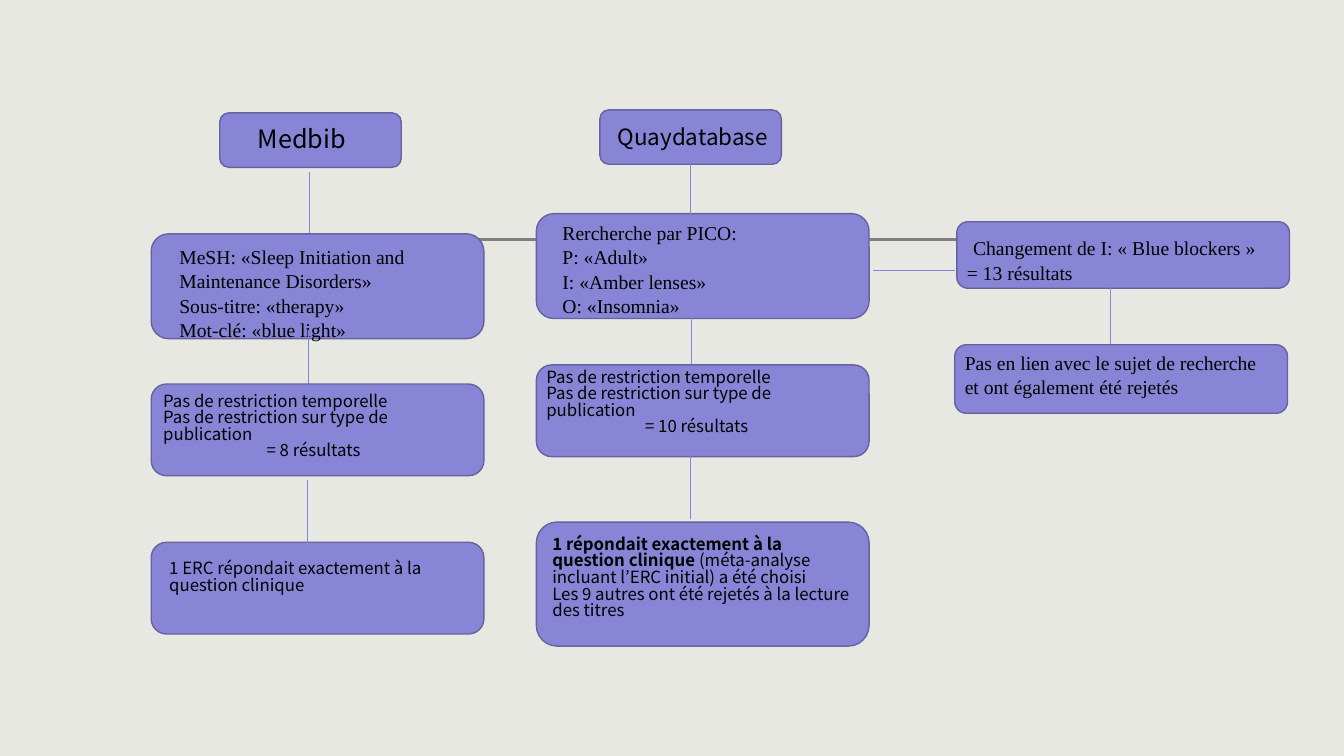
from lxml.etree import SubElement
from pptx import Presentation
from pptx.dml.color import RGBColor
from pptx.enum.shapes import MSO_CONNECTOR, MSO_SHAPE
from pptx.enum.text import PP_ALIGN
from pptx.oxml.ns import qn
from pptx.util import Inches, Pt

COLORS = {"background": "E8E8E2", "box": "8885D7", "border": "65629F",
          "rule": "808080", "text": "000000"}
SANS, SERIF = "Noto Sans CJK JP", "Times New Roman"
LINE_SPACING = {SANS: 0.82, SERIF: 1.04}
BOX_W, TEXT_W, DROP = 3.3, 3.18, 0.63


def color(name):
    return RGBColor.from_string(COLORS[name])


def add_line(slide, x1, y1, x2, y2, name="box", width=0.75):
    line = slide.shapes.add_connector(
        MSO_CONNECTOR.STRAIGHT, Inches(x1), Inches(y1), Inches(x2), Inches(y2))
    line.line.color.rgb = color(name)
    line.line.width = Pt(width)
    SubElement(line._element.spPr, qn("a:effectLst"))
    return line


def add_drop(slide, x, y):
    """Vertical link of the standard length, starting at (x, y)."""
    return add_line(slide, x, y, x, y + DROP)


def add_text(slide, x, y, w, h, paragraphs, size=12, font=SANS, last_centered=False):
    """Each paragraph is a string or a list of (text, run format) pairs."""
    tf = slide.shapes.add_textbox(Inches(x), Inches(y), Inches(w), Inches(h)).text_frame
    tf.word_wrap = True
    for i, runs in enumerate(paragraphs):
        p = tf.paragraphs[0] if i == 0 else tf.add_paragraph()
        p.line_spacing = LINE_SPACING[font]
        for text, style in [(runs, {})] if isinstance(runs, str) else runs:
            r = p.add_run()
            r.text = text
            r.font.name = font
            r.font.size = Pt(style.get("size", size))
            r.font.bold = style.get("bold", False)
            r.font.color.rgb = color("text")
    if last_centered:
        p.alignment = PP_ALIGN.CENTER


def add_node(slide, x, y, w, h, paragraphs, dx=0, dy=0, text_w=TEXT_W, text_h=None, **style):
    """Rounded box with a label set off from its corner by (dx, dy)."""
    sp = slide.shapes.add_shape(
        MSO_SHAPE.ROUNDED_RECTANGLE, Inches(x), Inches(y), Inches(w), Inches(h))
    sp.shadow.inherit = False
    sp.fill.solid()
    sp.fill.fore_color.rgb = color("box")
    sp.line.color.rgb = color("border")
    sp.line.width = Pt(1)
    add_text(slide, x + dx, y + dy, text_w, text_h or h, paragraphs, **style)
    return sp


def add_restrictions(slide, x, y, result, **offset):
    add_node(slide, x, y, BOX_W, 0.91,
             ["Pas de restriction temporelle",
              "Pas de restriction sur type de publication", result],
             text_h=1.11, last_centered=True, **offset)


def add_mesh_column(slide, x, y):
    add_node(slide, x + 0.68, y, 1.8, 0.54, ["Medbib"], dx=0.28, dy=0.11,
             text_w=1.51, text_h=0.4, size=18)
    add_drop(slide, x + 1.57, y + 0.59)
    add_node(slide, x, y + 1.2, BOX_W, 1.04,
             ["MeSH: «Sleep Initiation and Maintenance Disorders»",
              "Sous-titre: «therapy»", "Mot-clé: «blue light»"],
             dx=0.18, dy=0.05, size=14, font=SERIF)
    add_drop(slide, x + 1.56, y + 2.15)
    add_restrictions(slide, x, y + 2.69, "= 8 résultats", dx=0.02, dy=0.05)
    add_node(slide, x, y + 4.26, BOX_W, 0.91,
             ["1 ERC répondait exactement à la question clinique"],
             dx=0.08, dy=0.14, text_h=0.5)
    add_drop(slide, x + 1.55, y + 3.64)


def add_pico_column(slide, x, y):
    title = add_node(slide, x + 0.63, y, 1.8, 0.54, ["Quaydatabase"], dx=0.08, dy=0.13,
                     text_w=1.74, text_h=0.37, size=16)
    add_node(slide, x, y + 1.03, BOX_W, 1.04,
             ["Rercherche par PICO:", "P: «Adult»", "I: «Amber lenses»", "O: «Insomnia»"],
             dx=0.16, dy=0.01, size=14, font=SERIF)
    add_drop(slide, x + 1.54, y + 1.95)
    add_restrictions(slide, x, y + 2.53, "= 10 résultats")
    add_node(slide, x, y + 4.09, BOX_W, 1.23,
             [[("1 répondait exactement à la question clinique", {"bold": True}),
               (" (méta-analyse incluant l’ERC initial) a été choisi", {})],
              "Les 9 autres ont été rejetés à la lecture des titres"],
             dx=0.06, dy=0.1, text_h=1.11)
    add_drop(slide, x + 1.53, y + 3.43)
    add_drop(slide, x + 1.53, y + 0.51).begin_connect(title, 2)


def add_change_column(slide, x, y):
    add_line(slide, x - 0.83, y + 0.48, x - 0.02, y + 0.48)
    add_node(slide, x, y, BOX_W, 0.66,
             [[(" ", {"size": 18}), ("Changement de I: « Blue blockers »", {})],
              "= 13 résultats"],
             dy=0.02, text_h=0.64, size=14, font=SERIF)
    add_drop(slide, x + 1.52, y + 0.64)
    add_node(slide, x - 0.02, y + 1.22, BOX_W, 0.68,
             ["Pas en lien avec le sujet de recherche et ont également été rejetés"],
             text_h=0.57, size=14, font=SERIF)


def main():
    prs = Presentation()
    prs.slide_width, prs.slide_height = Inches(13.33), Inches(7.5)
    slide = prs.slides.add_slide(prs.slide_layouts[6])
    slide.background.fill.solid()
    slide.background.fill.fore_color.rgb = color("background")
    add_line(slide, 2.1, 2.38, 11.69, 2.38, name="rule", width=2)
    add_mesh_column(slide, 1.5, 1.12)
    add_pico_column(slide, 5.32, 1.09)
    add_change_column(slide, 9.49, 2.2)
    prs.save("out.pptx")


if __name__ == "__main__":
    main()
